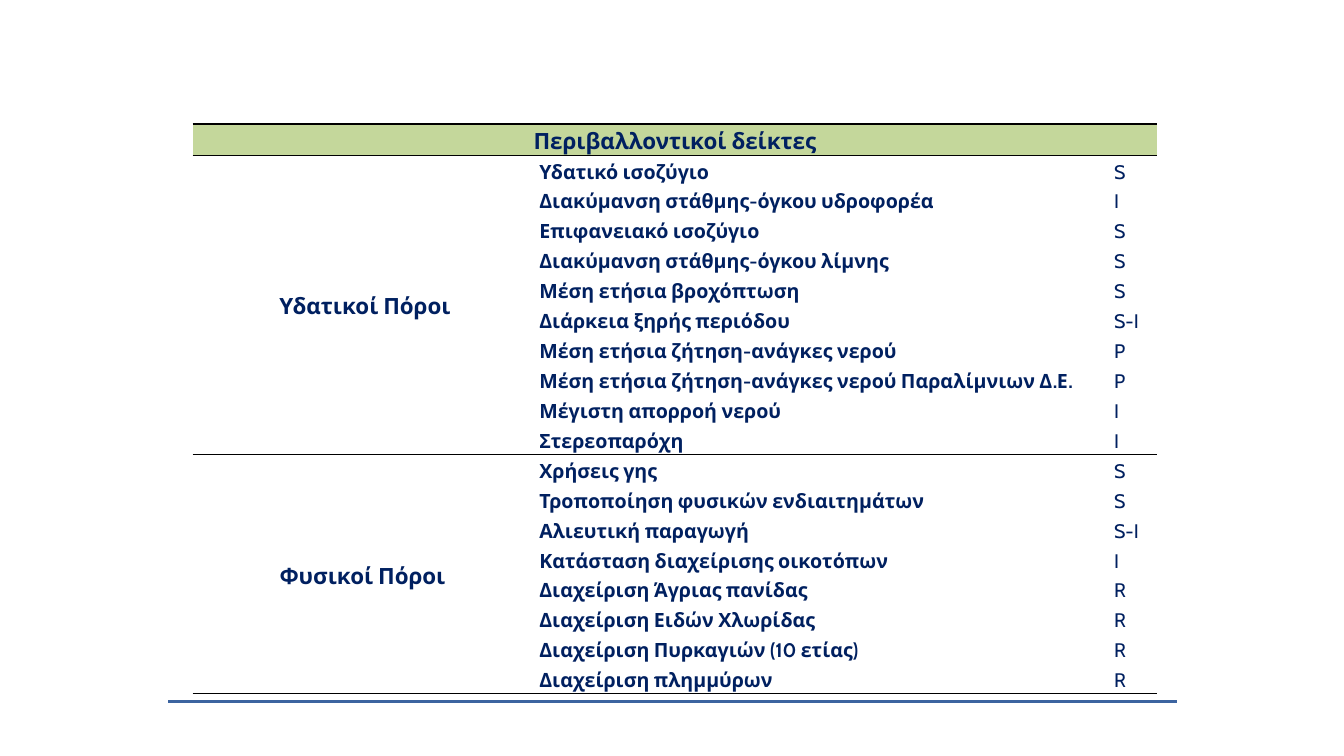
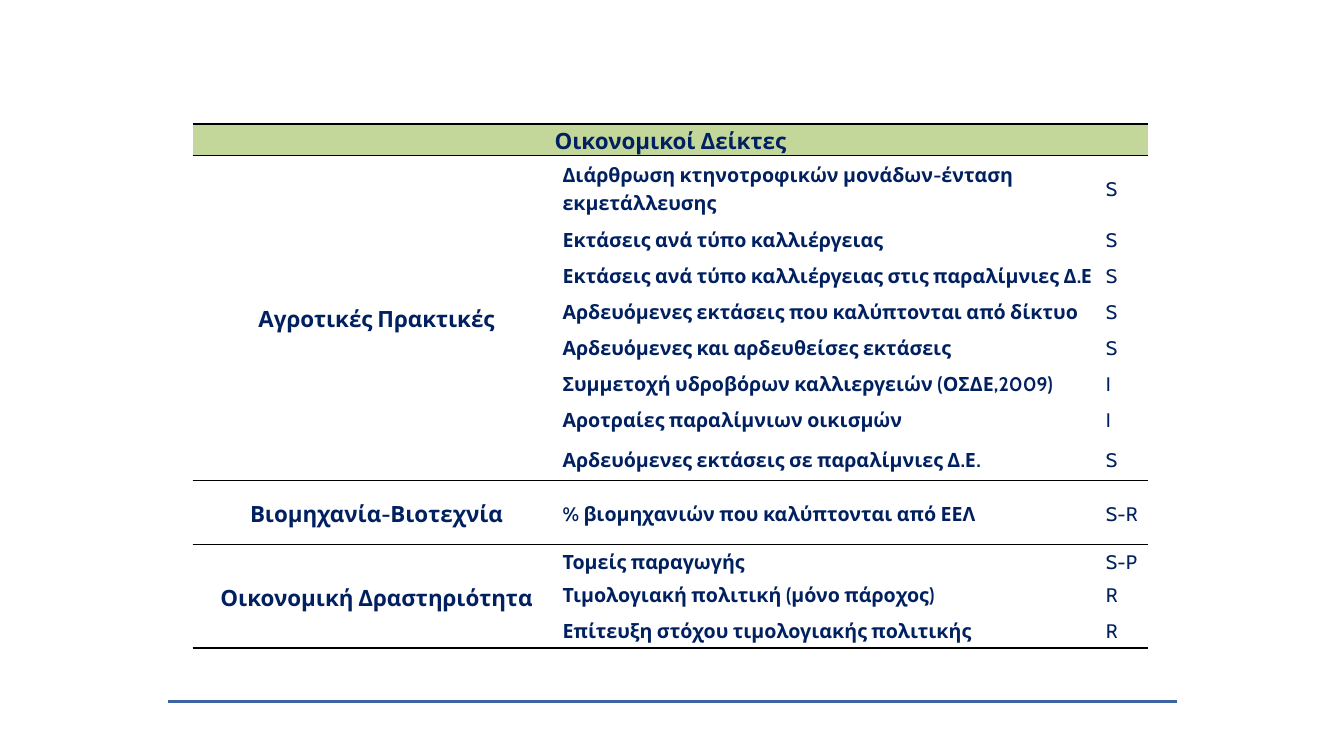
from lxml.etree import SubElement
from pptx import Presentation
from pptx.dml.color import RGBColor
from pptx.enum.text import MSO_ANCHOR, PP_ALIGN
from pptx.oxml.ns import qn
from pptx.util import Inches, Pt

COLORS = {"text": "002060", "header": "C4D79B", "border": "000000", "rule": "3C64A0"}
FONT = "Cabin"
NO_STYLE_NO_GRID = "{2D5ABB26-0587-4C30-8999-92F81FD0307C}"
TABLE_LEFT, TABLE_TOP = 1.91, 1.23
HEADER_HEIGHT = 0.31

HEADING = {"size": Pt(16), "bold": True}
INDICATOR = {"size": Pt(14), "bold": True}
CODE = {"size": Pt(14), "bold": False}
CELL_FORMAT = {
    "margin_left": Inches(0.02), "margin_right": Inches(0.02),
    "margin_top": 0, "margin_bottom": 0, "vertical_anchor": MSO_ANCHOR.MIDDLE,
}

ENVIRONMENT = {
    "Υδατικοί Πόροι": [
        ("Υδατικό ισοζύγιο", "S"),
        ("Διακύμανση στάθμης-όγκου υδροφορέα", "I"),
        ("Επιφανειακό ισοζύγιο", "S"),
        ("Διακύμανση στάθμης-όγκου λίμνης", "S"),
        ("Μέση ετήσια βροχόπτωση", "S"),
        ("Διάρκεια ξηρής περιόδου", "S-I"),
        ("Μέση ετήσια ζήτηση-ανάγκες νερού", "P"),
        ("Μέση ετήσια ζήτηση-ανάγκες νερού Παραλίμνιων Δ.Ε.", "P"),
        ("Μέγιστη απορροή νερού", "I"),
        ("Στερεοπαρόχη", "I"),
    ],
    "Φυσικοί Πόροι ": [
        ("Χρήσεις γης", "S"),
        ("Τροποποίηση φυσικών ενδιαιτημάτων", "S"),
        ("Αλιευτική παραγωγή", "S-I"),
        ("Κατάσταση διαχείρισης οικοτόπων", "I"),
        ("Διαχείριση Άγριας πανίδας", "R"),
        ("Διαχείριση Ειδών Χλωρίδας", "R"),
        ("Διαχείριση Πυρκαγιών (10 ετίας)", "R"),
        ("Διαχείριση πλημμύρων", "R"),
    ],
}
ECONOMY = {
    "Αγροτικές Πρακτικές": [
        ("Διάρθρωση κτηνοτροφικών μονάδων-ένταση εκμετάλλευσης", "S"),
        ("Εκτάσεις ανά τύπο καλλιέργειας", "S"),
        ("Εκτάσεις ανά τύπο καλλιέργειας στις παραλίμνιες Δ.Ε", "S"),
        ("Αρδευόμενες εκτάσεις που καλύπτονται από δίκτυο", "S"),
        ("Αρδευόμενες και αρδευθείσες εκτάσεις", "S"),
        ("Συμμετοχή υδροβόρων καλλιεργειών (ΟΣΔΕ,2009)", "I"),
        ("Αροτραίες παραλίμνιων οικισμών", "I"),
        ("Αρδευόμενες εκτάσεις σε παραλίμνιες Δ.Ε.", "S"),
    ],
    "Βιομηχανία-Βιοτεχνία": [("% βιομηχανιών που καλύπτονται από ΕΕΛ", "S-R")],
    "Οικονομική Δραστηριότητα": [
        ("Τομείς παραγωγής", "S-P"),
        ("Τιμολογιακή πολιτική (μόνο πάροχος)", "R"),
        ("Επίτευξη στόχου τιμολογιακής πολιτικής", "R"),
    ],
}
ENVIRONMENT_ROWS = [0.3] * 18
ECONOMY_ROWS = [0.65, 0.37] + [0.36] * 5 + [0.44, 0.64, 0.32, 0.36, 0.36]


def set_format(target, values):
    for name, value in values.items():
        setattr(target, name, value)


def add_rule(slide):
    """Draw the line along the foot of the slide."""
    rule = slide.shapes.add_connector(
        1, Inches(1.67), Inches(6.96), Inches(11.67), Inches(6.96))
    rule.line.color.rgb = RGBColor.from_string(COLORS["rule"])
    rule.line.width = Pt(2)
    SubElement(rule._element.spPr, qn("a:effectLst"))


def write_cell(cell, text, font_format, alignment=PP_ALIGN.LEFT):
    paragraph = cell.text_frame.paragraphs[0]
    set_format(paragraph, {"alignment": alignment, "line_spacing": 1.15})
    run = paragraph.add_run()
    run.text = text
    set_format(run.font, {"name": FONT, **font_format})
    run.font.color.rgb = RGBColor.from_string(COLORS["text"])


def set_borders(cell, top=True, bottom=True):
    """Draw the chosen horizontal borders and switch the other ones off."""
    properties = cell._tc.get_or_add_tcPr()
    for index, (side, drawn) in enumerate((("lnT", top), ("lnB", bottom))):
        line = SubElement(properties, qn(f"a:{side}"), w=str(Pt(1)))
        if drawn:
            fill = SubElement(line, qn("a:solidFill"))
            SubElement(fill, qn("a:srgbClr"), val=COLORS["border"])
        else:
            SubElement(line, qn("a:noFill"))
        properties.insert(index, line)


def fill_group(table, first, name, indicators):
    """Write one group of indicators and return the row after it."""
    last = first + len(indicators) - 1
    if last > first:
        table.cell(first, 0).merge(table.cell(last, 0))
    write_cell(table.cell(first, 0), name, HEADING, PP_ALIGN.CENTER)
    set_borders(table.cell(first, 0))
    for row, (indicator, code) in enumerate(indicators, first):
        for column, text, font_format in ((1, indicator, INDICATOR), (2, code, CODE)):
            cell = table.cell(row, column)
            write_cell(cell, text, font_format)
            set_borders(cell, top=row == first, bottom=row == last)
    return last + 1


def add_indicator_table(slide, title, groups, widths, table_height, row_weights):
    """Add a table whose body rows share the height left below the header."""
    scale = (table_height - HEADER_HEIGHT) / sum(row_weights)
    heights = [HEADER_HEIGHT] + [weight * scale for weight in row_weights]
    frame = slide.shapes.add_table(
        len(heights), len(widths), Inches(TABLE_LEFT), Inches(TABLE_TOP),
        Inches(sum(widths)), Inches(table_height))
    table = frame.table
    set_format(table, {"first_row": False, "horz_banding": False})
    table._tbl.tblPr.find(qn("a:tableStyleId")).text = NO_STYLE_NO_GRID
    for column, width in zip(table.columns, widths):
        column.width = Inches(width)
    for row, height in zip(table.rows, heights):
        row.height = Inches(height)
    for cell in table.iter_cells():
        set_format(cell, CELL_FORMAT)
        cell.fill.background()

    header = table.cell(0, 0)
    header.merge(table.cell(0, len(widths) - 1))
    header.fill.solid()
    header.fill.fore_color.rgb = RGBColor.from_string(COLORS["header"])
    write_cell(header, title, HEADING, PP_ALIGN.CENTER)
    for cell in table.rows[0].cells:
        set_borders(cell)

    next_row = 1
    for name, indicators in groups.items():
        next_row = fill_group(table, next_row, name, indicators)


def main():
    presentation = Presentation()
    presentation.slide_width = Inches(13.33)
    presentation.slide_height = Inches(7.5)
    for title, groups, widths, height, rows in (
        ("Περιβαλλοντικοί δείκτες", ENVIRONMENT, (3.42, 5.7, 0.45), 5.66, ENVIRONMENT_ROWS),
        ("Οικονομικοί Δείκτες", ECONOMY, (3.65, 5.39, 0.44), 5.2, ECONOMY_ROWS),
    ):
        slide = presentation.slides.add_slide(presentation.slide_layouts[6])
        add_rule(slide)
        add_indicator_table(slide, title, groups, widths, height, rows)
    presentation.save("out.pptx")


if __name__ == "__main__":
    main()
